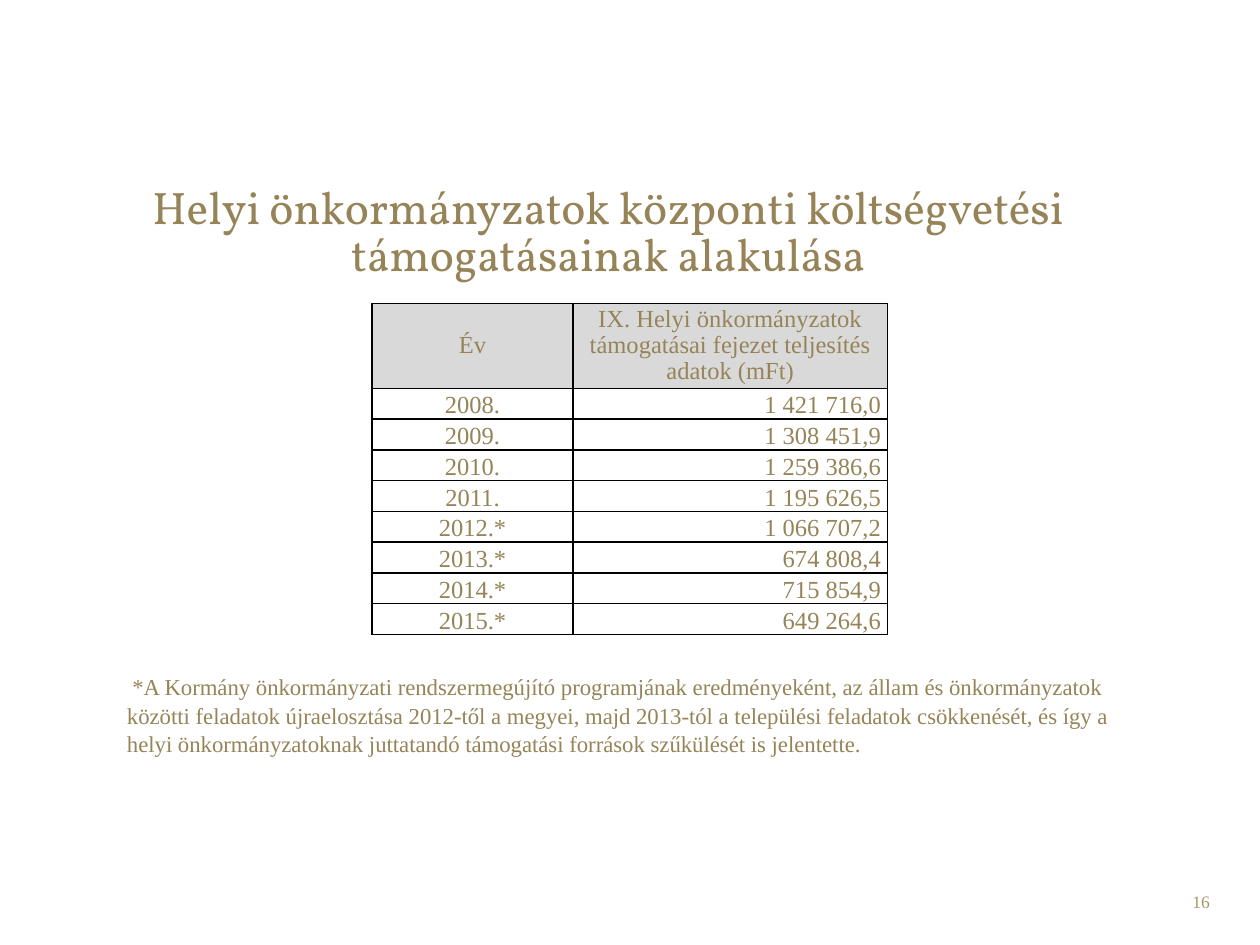
from dataclasses import dataclass

from lxml import etree
from pptx import Presentation
from pptx import util as u
from pptx.dml.color import RGBColor
from pptx.enum import text
from pptx.oxml import ns


@dataclass(frozen=True)
class Theme:
    gold: str = "968458"
    pale_gold: str = "A69765"
    header_fill: str = "D9D9D9"
    border: str = "000000"
    body_font: str = "Times New Roman"
    title_font: str = "Vollkorn"
    title_size: float = 26
    table_size: float = 14
    note_size: float = 13
    number_size: float = 10


THEME = Theme()
ALIGN = text.PP_ALIGN
ANCHOR = text.MSO_ANCHOR

HEADER = ("Év", "IX. Helyi önkormányzatok támogatásai fejezet teljesítés adatok (mFt)")
GRANTS = (
    ("2008.", "1 421 716,0"),
    ("2009.", "1 308 451,9"),
    ("2010.", "1 259 386,6"),
    ("2011.", "1 195 626,5"),
    ("2012.*", "1 066 707,2"),
    ("2013.*", "674 808,4"),
    ("2014.*", "715 854,9"),
    ("2015.*", "649 264,6"),
)
NOTE = (
    "*A Kormány önkormányzati rendszermegújító programjának eredményeként, "
    "az állam és önkormányzatok közötti feladatok újraelosztása 2012-től a megyei, "
    "majd 2013-tól a települési feladatok csökkenését, és így a helyi "
    "önkormányzatoknak juttatandó támogatási források szűkülését is jelentette."
)


def write(frame, words, *, size, font=THEME.body_font, color=THEME.gold,
          align=ALIGN.LEFT, spacing=1.0, indent=0):
    """Fill a text frame with one formatted paragraph; indent is in cm."""
    frame.word_wrap = True
    paragraph = frame.paragraphs[0]
    paragraph.alignment = align
    paragraph.line_spacing = spacing
    if indent:
        paragraph._p.get_or_add_pPr().set("indent", str(u.Cm(indent)))
    run = paragraph.add_run()
    run.text = words
    run.font.size = u.Pt(size)
    run.font.name = font
    run.font.color.rgb = RGBColor.from_string(color)


def add_text(slide, box, words, anchor=ANCHOR.TOP, **style):
    frame = slide.shapes.add_textbox(*map(u.Cm, box)).text_frame
    frame.vertical_anchor = anchor
    write(frame, words, **style)


def add_borders(cell, color=THEME.border, width=1):
    properties = cell._tc.get_or_add_tcPr()
    for index, side in enumerate(("lnL", "lnR", "lnT", "lnB")):
        line = etree.Element(ns.qn(f"a:{side}"), w=str(u.Pt(width)))
        fill = etree.SubElement(line, ns.qn("a:solidFill"))
        etree.SubElement(fill, ns.qn("a:srgbClr"), val=color)
        properties.insert(index, line)


def add_grants_table(slide, box, year_share=0.39, header_height=1.64):
    """Place the yearly grants; the rows below the header share what is left."""
    left, top, width, height = box
    rows = (HEADER, *GRANTS)
    table = slide.shapes.add_table(len(rows), 2, *map(u.Cm, box)).table
    table.columns[0].width = u.Cm(width * year_share)
    table.columns[1].width = u.Cm(width * (1 - year_share))
    row_height = (height - header_height) / len(GRANTS)
    for row_index, row in enumerate(rows):
        is_header = row_index == 0
        table.rows[row_index].height = u.Cm(header_height if is_header else row_height)
        for column, words in enumerate(row):
            cell = table.cell(row_index, column)
            cell.margin_left = cell.margin_right = u.Cm(0.13)
            cell.margin_top = cell.margin_bottom = 0
            cell.vertical_anchor = ANCHOR.MIDDLE if is_header else ANCHOR.BOTTOM
            if is_header:
                cell.fill.solid()
                cell.fill.fore_color.rgb = RGBColor.from_string(THEME.header_fill)
            else:
                cell.fill.background()
            add_borders(cell)
            centred = is_header or column == 0
            write(cell.text_frame, words, size=THEME.table_size, spacing=0.96,
                  align=ALIGN.CENTER if centred else ALIGN.RIGHT)


def add_title(slide, box):
    add_text(slide, box, "Helyi önkormányzatok központi költségvetési támogatásainak alakulása",
             anchor=ANCHOR.MIDDLE, size=THEME.title_size, font=THEME.title_font,
             align=ALIGN.CENTER, spacing=0.86)


def add_note(slide, box):
    add_text(slide, box, NOTE, size=THEME.note_size, spacing=1.05, indent=0.11)


def add_slide_number(slide, box):
    add_text(slide, box, "16", size=THEME.number_size, color=THEME.pale_gold,
             align=ALIGN.RIGHT)


def main():
    presentation = Presentation()
    presentation.slide_width = u.Cm(25.4)
    presentation.slide_height = u.Cm(19.05)
    slide = presentation.slides.add_slide(presentation.slide_layouts[6])
    add_slide_number(slide, (18.72, 17.83, 5.92, 1.02))
    add_title(slide, (0.84, 3.33, 22.86, 2.79))
    add_grants_table(slide, (7.5, 6.12, 10.39, 6.6))
    add_note(slide, (2.31, 13.41, 20.8, 2.39))
    presentation.save("out.pptx")


if __name__ == "__main__":
    main()
